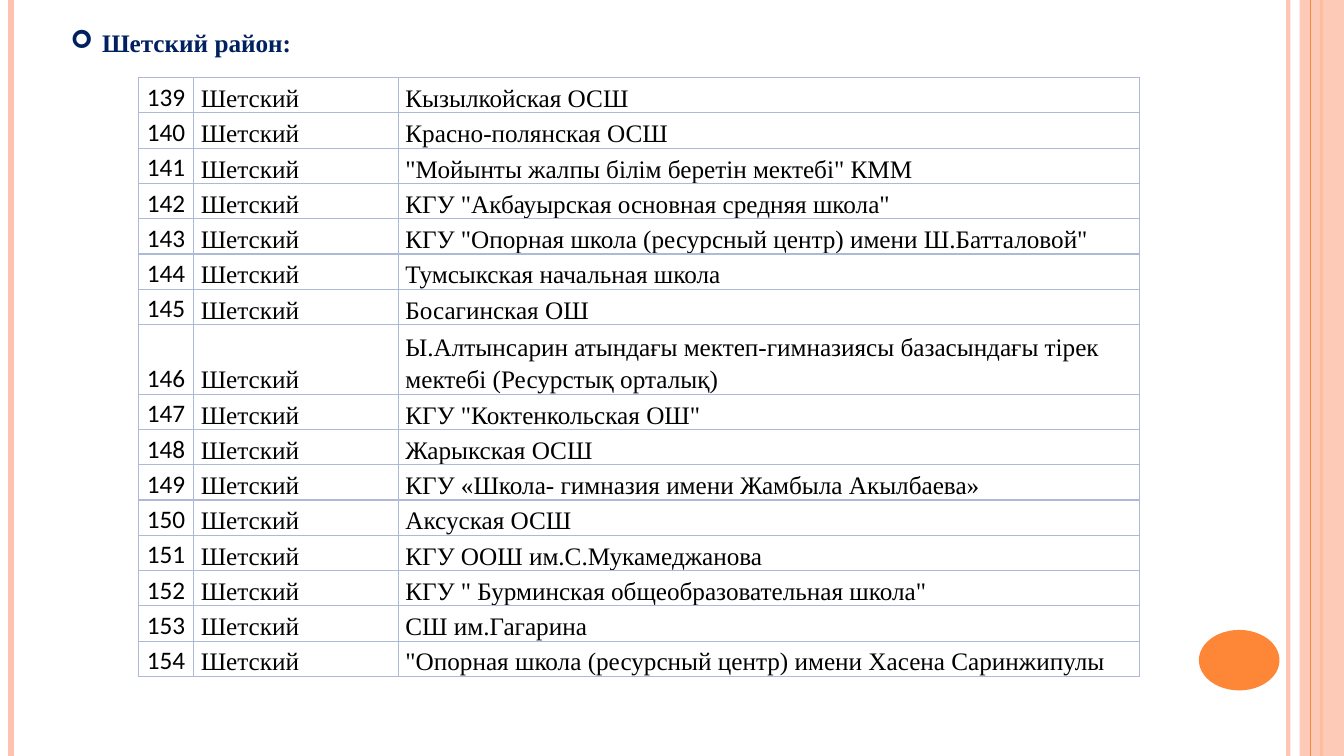
from dataclasses import dataclass
from typing import Optional

from lxml.etree import SubElement
from pptx import Presentation
from pptx.dml.color import RGBColor
from pptx.enum.shapes import MSO_CONNECTOR as Connector, MSO_SHAPE as Shape
from pptx.enum.text import MSO_ANCHOR as Anchor, MSO_AUTO_SIZE as AutoSize, PP_ALIGN as Align
from pptx.oxml import parse_xml
from pptx.oxml.ns import nsdecls, qn
from pptx.util import Inches, Pt

WIDTH, HEIGHT = Inches(13.33), Inches(7.5)


@dataclass(frozen=True)
class Theme:
    peach: str = "FEC3AE"
    orange: str = "FE8637"
    navy: str = "002060"
    ink: str = "000000"
    border: str = "AEBAD5"
    serif: str = "Times New Roman"
    sans: str = "Calibri"
    size: int = 18
    spacing: float = 1.15


@dataclass(frozen=True)
class Stripe:
    x: float
    weight: float
    color: str
    opacity: int = 100


@dataclass(frozen=True)
class Panel:
    kind: Shape
    x: float
    y: float
    width: float
    height: float
    color: str
    opacity: int = 100


@dataclass(frozen=True)
class Column:
    width: float
    font: str
    align: Align


THEME = Theme()
DECOR = [
    Stripe(95.85, 3, THEME.peach, 93),
    Stripe(0.83, 4.5, THEME.peach),
    Stripe(98.33, 1.5, THEME.orange),
    Panel(Shape.RECTANGLE, 96.7, 0, 3.3, 100, THEME.peach, 87),
    Stripe(97.5, 0.75, THEME.orange),
    Panel(Shape.OVAL, 89.2, 83.33, 6, 8, THEME.orange),
]
COLUMNS = [
    Column(4.13, THEME.sans, Align.CENTER),
    Column(15.23, THEME.serif, Align.LEFT),
    Column(55.13, THEME.serif, Align.LEFT),
]
ROW_HEIGHT, TALL_ROW_HEIGHT = 4.67, 8.4
FIRST_NUMBER, TALL_NUMBER = 139, 146
DISTRICT = "Шетский"
SCHOOLS = [
    "Кызылкойская ОСШ",
    "Красно-полянская ОСШ",
    '"Мойынты жалпы білім беретін мектебі" КММ',
    'КГУ "Акбауырская основная средняя школа"',
    'КГУ "Опорная школа (ресурсный центр) имени Ш.Батталовой"',
    "Тумсыкская начальная школа",
    "Босагинская ОШ",
    "Ы.Алтынсарин атындағы мектеп-гимназиясы базасындағы тірек мектебі (Ресурстық орталық)",
    'КГУ "Коктенкольская ОШ"',
    "Жарыкская ОСШ",
    "КГУ «Школа- гимназия имени Жамбыла Акылбаева»",
    "Аксуская ОСШ",
    "КГУ ООШ им.С.Мукамеджанова",
    'КГУ " Бурминская общеобразовательная школа"',
    "СШ им.Гагарина",
    '"Опорная школа (ресурсный центр) имени Хасена Саринжипулы',
]


def across(percent: float) -> int:
    return round(WIDTH * percent / 100)


def down(percent: float) -> int:
    return round(HEIGHT * percent / 100)


def write(frame, text: str, *, font: str, color: str = THEME.ink, bold: bool = False,
          align: Align = Align.LEFT, spacing: float = 1.0, bullet: Optional[str] = None) -> None:
    para = frame.paragraphs[0]
    para.alignment = align
    para.line_spacing = spacing
    span = para.add_run()
    span.text = text
    span.font.name = font
    span.font.size = Pt(THEME.size)
    span.font.bold = bold
    span.font.color.rgb = RGBColor.from_string(color)
    if bullet:
        indent = across(2.34)
        properties = para._p.get_or_add_pPr()
        properties.set("marL", str(indent))
        properties.set("indent", str(-indent))
        SubElement(properties, qn("a:buFont"), typeface="Wingdings")
        SubElement(properties, qn("a:buChar"), char=bullet)


def paint(fill, color: str, opacity: int) -> None:
    fill.solid()
    fill.fore_color.rgb = RGBColor.from_string(color)
    if opacity < 100:
        tint = fill._xPr.find(".//" + qn("a:srgbClr"))
        SubElement(tint, qn("a:alpha"), val=str(opacity * 1000))


def draw_stripe(slide, stripe: Stripe) -> None:
    x = across(stripe.x)
    line = slide.shapes.add_connector(Connector.STRAIGHT, x, 0, x, HEIGHT)
    line.line.width = Pt(stripe.weight)
    paint(line.line.fill, stripe.color, stripe.opacity)
    SubElement(line._element.spPr, qn("a:effectLst"))


def draw_panel(slide, panel: Panel) -> None:
    shape = slide.shapes.add_shape(panel.kind, across(panel.x), down(panel.y),
                                   across(panel.width), down(panel.height))
    shape.shadow.inherit = False
    shape.line.fill.background()
    paint(shape.fill, panel.color, panel.opacity)


def outline(cell) -> None:
    properties = cell._tc.get_or_add_tcPr()
    for index, side in enumerate(("lnL", "lnR", "lnT", "lnB")):
        properties.insert(index, parse_xml(
            f'<a:{side} {nsdecls("a")} w="{Pt(1)}"><a:solidFill>'
            f'<a:srgbClr val="{THEME.border}"/></a:solidFill></a:{side}>'))


def draw_title(slide, text: str) -> None:
    title = slide.shapes.title
    title.left, title.top = across(4.5), down(2.93)
    title.width, title.height = across(18.08), down(5.33)
    frame = title.text_frame
    frame.word_wrap = False
    frame.auto_size = AutoSize.SHAPE_TO_FIT_TEXT
    frame.vertical_anchor = Anchor.TOP
    write(frame, text, font=THEME.serif, color=THEME.navy, bold=True, bullet="➢")


def draw_schools(slide) -> None:
    heights = [TALL_ROW_HEIGHT if number == TALL_NUMBER else ROW_HEIGHT
               for number, _ in enumerate(SCHOOLS, FIRST_NUMBER)]
    table = slide.shapes.add_table(
        len(SCHOOLS), len(COLUMNS), across(10.28), down(10.27),
        across(sum(column.width for column in COLUMNS)), down(sum(heights))).table
    table.first_row = table.horz_banding = False
    for target, column in zip(table.columns, COLUMNS):
        target.width = across(column.width)
    for index, (school, height) in enumerate(zip(SCHOOLS, heights)):
        table.rows[index].height = down(height)
        values = (str(FIRST_NUMBER + index), DISTRICT, school)
        for cell, column, value in zip(table.rows[index].cells, COLUMNS, values):
            cell.margin_left = cell.margin_right = across(0.53)
            cell.margin_top = cell.margin_bottom = 0
            cell.vertical_anchor = Anchor.BOTTOM
            cell.fill.background()
            outline(cell)
            write(cell.text_frame, value, font=column.font, align=column.align,
                  spacing=THEME.spacing)


def main() -> None:
    deck = Presentation()
    deck.slide_width, deck.slide_height = WIDTH, HEIGHT
    page = deck.slides.add_slide(deck.slide_layouts.get_by_name("Title Only"))
    for item in DECOR:
        if isinstance(item, Stripe):
            draw_stripe(page, item)
        else:
            draw_panel(page, item)
    draw_schools(page)
    draw_title(page, "Шетский район:")
    deck.save("out.pptx")


if __name__ == "__main__":
    main()
